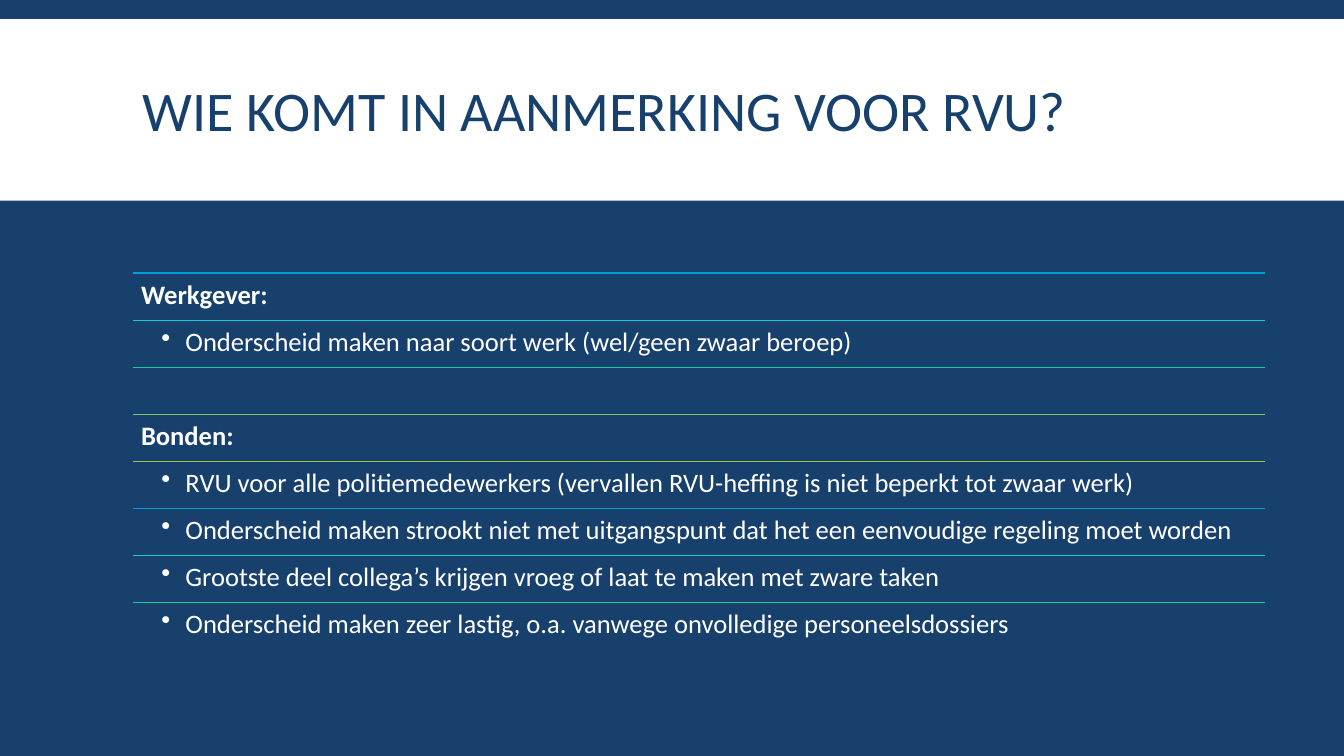
import pptx
import pptx.util
import pptx.dml.color
import pptx.enum.shapes
import pptx.enum.text
import pptx.oxml
import pptx.oxml.ns

Inches = pptx.util.Inches

TITLE = "WIE KOMT IN AANMERKING VOOR RVU?"
# Each row: kind, text
ROWS = [
    ("heading", "Werkgever:"),
    ("bullet", "Onderscheid maken naar soort werk (wel/geen zwaar beroep)"),
    ("empty", ""),
    ("heading", "Bonden:"),
    ("bullet", "RVU voor alle politiemedewerkers (vervallen RVU-heffing is niet beperkt tot zwaar werk)"),
    ("bullet", "Onderscheid maken strookt niet met uitgangspunt dat het een eenvoudige regeling moet worden"),
    ("bullet", "Grootste deel collega’s krijgen vroeg of laat te maken met zware taken"),
    ("bullet", "Onderscheid maken zeer lastig, o.a. vanwege onvolledige personeelsdossiers"),
]
COLORS = {
    "navy": "17406D",
    "white": "FFFFFF",
    "blue": "009DD9",
    "cyan": "0BD0D9",
    "teal": "10CF9B",
    "green": "7CCA62",
    "olive": "A5C249",
}
RULE_CYCLE = ["blue", "cyan", "teal", "green", "olive"]
FONT = "Calibri"
LEFT, TOP, WIDTH = 1.32, 2.71, 11.23
ROW_HEIGHT = 3.27 / (len(ROWS) - 1)
HEADING_INSET, BULLET_INSET, BULLET_HANG = 0.08, 0.28, 0.24


def color(name):
    return pptx.dml.color.RGBColor.from_string(COLORS[name])


def set_all(target, values):
    for name, value in values.items():
        setattr(target, name, value)


def add_text(slide, box, text, insets, frame_format, paragraph_format, font_format, color_name):
    """Add a one-paragraph text box; box and insets are in inches."""
    frame = slide.shapes.add_textbox(*map(Inches, box)).text_frame
    sides = ("margin_left", "margin_top", "margin_right", "margin_bottom")
    set_all(frame, dict(zip(sides, map(Inches, insets))))
    set_all(frame, {"word_wrap": True, **frame_format})
    paragraph = frame.paragraphs[0]
    set_all(paragraph, paragraph_format)
    run = paragraph.add_run()
    run.text = text
    set_all(run.font, {"name": FONT, **font_format})
    run.font.color.rgb = color(color_name)
    return paragraph


def add_bullet(paragraph):
    properties = paragraph._p.get_or_add_pPr()
    properties.set("marL", str(Inches(BULLET_HANG)))
    properties.set("indent", str(-Inches(BULLET_HANG)))
    bullet = pptx.oxml.parse_xml(f'<a:buChar {pptx.oxml.ns.nsdecls("a")} char="•"/>')
    properties.append(bullet)


def add_rule(slide, top, color_name):
    line = slide.shapes.add_connector(
        pptx.enum.shapes.MSO_CONNECTOR.STRAIGHT,
        Inches(LEFT), Inches(top), Inches(LEFT + WIDTH), Inches(top),
    )
    line.line.color.rgb = color(color_name)
    line.line.width = pptx.util.Pt(1)
    effects = pptx.oxml.parse_xml(f'<a:effectLst {pptx.oxml.ns.nsdecls("a")}/>')
    line._element.spPr.append(effects)


def add_title(slide):
    band = slide.shapes.add_shape(
        pptx.enum.shapes.MSO_SHAPE.RECTANGLE,
        Inches(0), Inches(0.19), Inches(13.33), Inches(1.8),
    )
    band.shadow.inherit = False
    band.fill.solid()
    band.fill.fore_color.rgb = color("white")
    band.line.fill.background()
    add_text(
        slide, (LEFT, 0.31, 10.7, 1.65), TITLE, (0.1, 0.05, 0.1, 0.05),
        {"vertical_anchor": pptx.enum.text.MSO_ANCHOR.MIDDLE},
        {"line_spacing": 0.85}, {"size": pptx.util.Pt(40)}, "navy",
    )


def add_rows(slide):
    for index, (kind, text) in enumerate(ROWS):
        top = TOP + index * ROW_HEIGHT
        add_rule(slide, top, RULE_CYCLE[index % len(RULE_CYCLE)])
        if kind == "empty":
            continue
        inset = BULLET_INSET if kind == "bullet" else HEADING_INSET
        paragraph = add_text(
            slide, (LEFT, top, WIDTH, ROW_HEIGHT), text, (inset, 0.08, 0.08, 0.08),
            {"vertical_anchor": pptx.enum.text.MSO_ANCHOR.TOP},
            {"line_spacing": 0.9},
            {"size": pptx.util.Pt(19), "bold": kind == "heading"}, "white",
        )
        if kind == "bullet":
            add_bullet(paragraph)


def main():
    presentation = pptx.Presentation()
    set_all(presentation, {"slide_width": Inches(13.33), "slide_height": Inches(7.5)})
    slide = presentation.slides.add_slide(presentation.slide_layouts[6])
    slide.background.fill.solid()
    slide.background.fill.fore_color.rgb = color("navy")
    add_title(slide)
    add_rows(slide)
    presentation.save("out.pptx")


if __name__ == "__main__":
    main()
